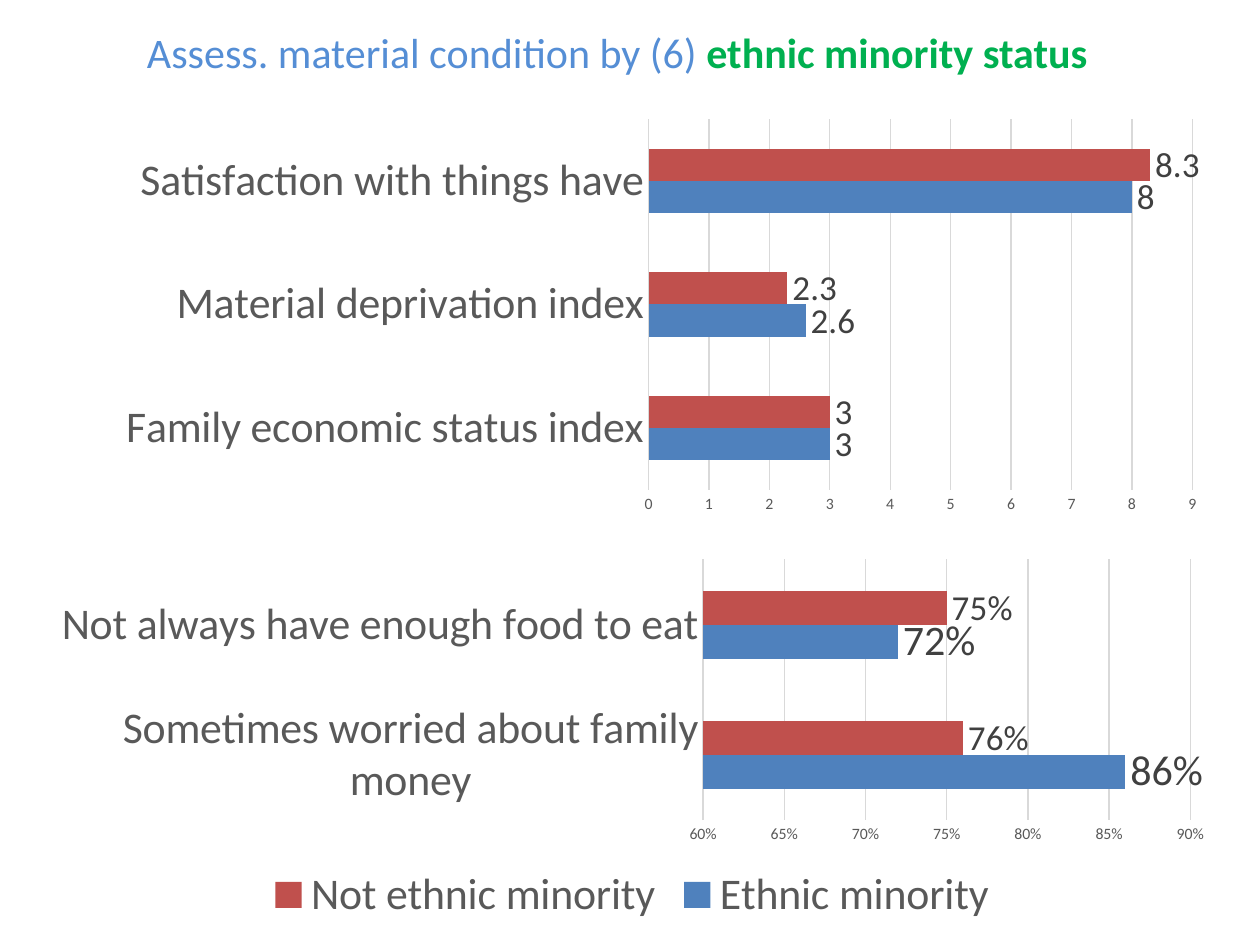
from lxml import etree
from pptx import Presentation
from pptx.chart.data import CategoryChartData
from pptx.dml.color import RGBColor
from pptx.enum.chart import (XL_CHART_TYPE, XL_LABEL_POSITION,
                             XL_LEGEND_POSITION, XL_TICK_MARK)
from pptx.enum.text import MSO_ANCHOR, MSO_AUTO_SIZE, PP_ALIGN
from pptx.util import Pt

BAR = XL_CHART_TYPE.BAR_CLUSTERED
OUT = XL_LABEL_POSITION.OUTSIDE_END
LOW = XL_LEGEND_POSITION.BOTTOM
NONE = XL_TICK_MARK.NONE
FONT = "Calibri"
HUES = {"title": "558ED5", "accent": "00B050", "text": "595959",
        "label": "404040", "grid": "D9D9D9", "base": "000000",
        "ethnic": "4F81BD", "other": "C0504D"}
NS = "http://schemas.openxmlformats.org/drawingml/2006/chart"


def rgb(name):
    return RGBColor.from_string(HUES[name])


def style(font, size, hue, bold=False):
    font.name = FONT
    font.size = Pt(size)
    font.bold = bold
    font.color.rgb = rgb(hue)


def write(para, text, size=24, hue="title", bold=False):
    run = para.add_run()
    run.text = text
    style(run.font, size, hue, bold)


def rule(line):
    line.color.rgb = rgb("grid")
    line.width = Pt(0.75)


def set_plot(chart, area):
    """Fix the inner plot area as fractions of the chart box."""
    plot = chart._chartSpace.chart.plotArea
    for old in plot.findall(f"{{{NS}}}layout"):
        plot.remove(old)
    layout = etree.Element(f"{{{NS}}}layout")
    manual = etree.SubElement(layout, f"{{{NS}}}manualLayout")
    tags = ("layoutTarget", "xMode", "yMode", "x", "y", "w", "h")
    for tag, val in zip(tags, ("inner", "edge", "edge", *area)):
        etree.SubElement(manual, f"{{{NS}}}{tag}").set("val", str(val))
    plot.insert(0, layout)


def add_title(slide, box):
    title = slide.shapes.title
    title.left, title.top, title.width, title.height = map(Pt, box)
    frame = title.text_frame
    frame.word_wrap = True
    frame.auto_size = MSO_AUTO_SIZE.NONE
    frame.vertical_anchor = MSO_ANCHOR.BOTTOM
    para = frame.paragraphs[0]
    para.alignment = PP_ALIGN.CENTER
    write(para, "Assess. material condition by (6) ")
    write(para, "ethnic minority status ", hue="accent", bold=True)


def add_bars(slide, box, area, cats, series, span, fmt="General", legend=False):
    """Each series is (name, values, hue, label size); span is (min, max, step)."""
    data = CategoryChartData(number_format=fmt)
    data.categories = cats
    for name, vals, _, _ in series:
        data.add_series(name, vals)
    chart = slide.shapes.add_chart(BAR, *map(Pt, box), data).chart
    style(chart.font, 10, "base")
    chart.has_title = False
    set_plot(chart, area)

    # Axes
    cat, val = chart.category_axis, chart.value_axis
    for axis, size in ((cat, 25), (val, 9)):
        axis.major_tick_mark = axis.minor_tick_mark = NONE
        style(axis.tick_labels.font, size, "text")
    cat.has_major_gridlines = False
    rule(cat.format.line)
    val.format.line.fill.background()
    val.has_major_gridlines = True
    rule(val.major_gridlines.format.line)
    val.minimum_scale, val.maximum_scale, val.major_unit = span
    val.tick_labels.number_format = fmt
    val.tick_labels.number_format_is_linked = False

    # Bars and their labels
    plot = chart.plots[0]
    plot.gap_width, plot.overlap = 182, 0
    plot.vary_by_categories = False
    for bars, (_, _, hue, size) in zip(plot.series, series):
        bars.invert_if_negative = False
        bars.format.fill.solid()
        bars.format.fill.fore_color.rgb = rgb(hue)
        tags = bars.data_labels
        tags.show_value = True
        tags.position = OUT
        tags.number_format = fmt
        tags.number_format_is_linked = False
        style(tags.font, size, "label")

    # Legend
    chart.has_legend = legend
    if legend:
        chart.legend.position = LOW
        chart.legend.include_in_layout = False
        style(chart.legend.font, 25, "text")


def main():
    deck = Presentation()
    deck.slide_width, deck.slide_height = Pt(720), Pt(540)
    slide = deck.slides.add_slide(deck.slide_layouts[5])
    add_title(slide, (-2, 9.4, 715, 38))
    # Index scores
    add_bars(slide, (59.8, 63.4, 634.3, 235.4), (0.49, 0.02, 0.49, 0.9),
             ("Family economic status index", "Material deprivation index",
              "Satisfaction with things have"),
             (("Series 1", (3, 2.6, 8), "ethnic", 20),
              ("Series 2", (3, 2.3, 8.3), "other", 20)),
             (0, 9, 1))
    # Shares of respondents
    add_bars(slide, (21.6, 315.4, 679, 216), (0.56, 0.02, 0.41, 0.69),
             ("Sometimes worried about family money",
              "Not always have enough food to eat"),
             (("Ethnic minority", (0.86, 0.72), "ethnic", 24),
              ("Not ethnic minority", (0.76, 0.75), "other", 20)),
             (0.6, 0.9, 0.05), fmt="0%", legend=True)
    deck.save("out.pptx")


if __name__ == "__main__":
    main()
